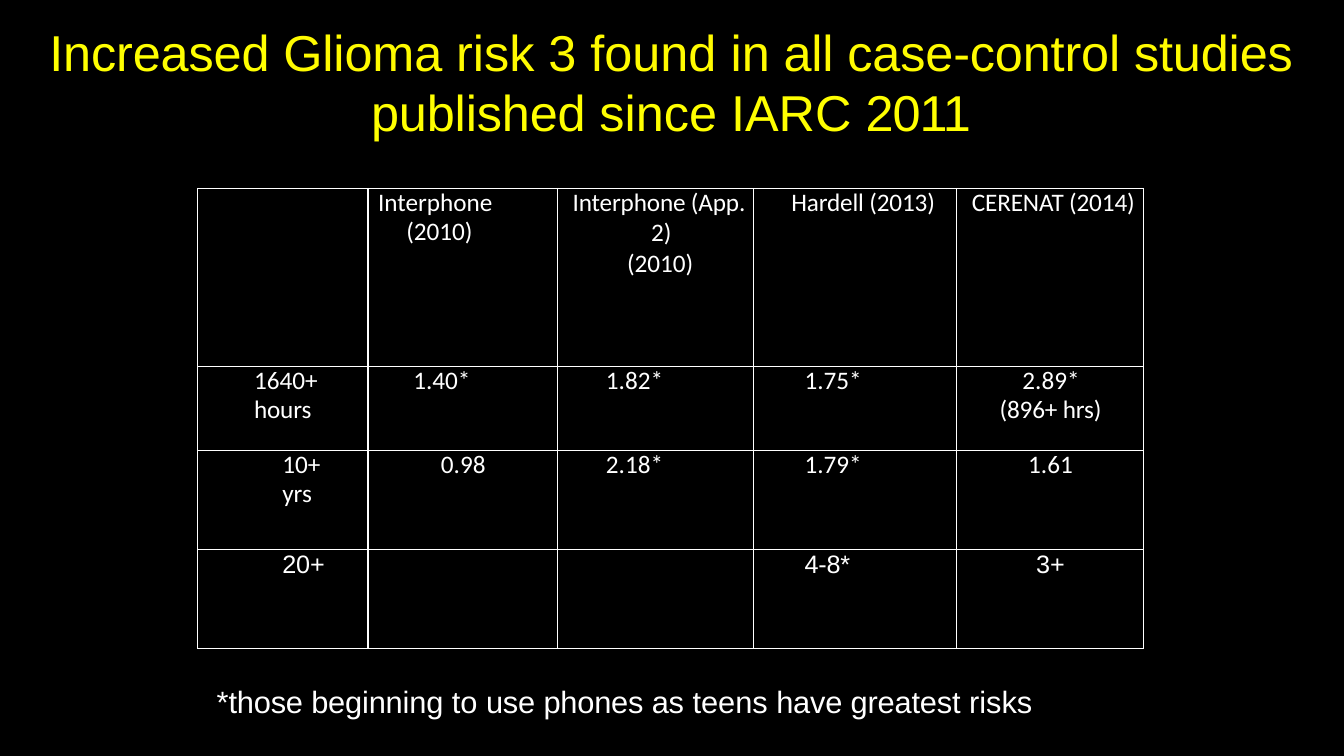
from dataclasses import dataclass

from lxml import etree
from pptx import Presentation
from pptx.dml.color import RGBColor
from pptx.enum.text import MSO_ANCHOR, MSO_AUTO_SIZE, PP_ALIGN
from pptx.oxml.ns import qn
from pptx.util import Pt

PX = 9144
TOP = MSO_ANCHOR.TOP
FIXED = MSO_AUTO_SIZE.NONE
GROW = MSO_AUTO_SIZE.SHAPE_TO_FIT_TEXT
LEFT, CENTER = PP_ALIGN.LEFT, PP_ALIGN.CENTER
BLACK = RGBColor(0, 0, 0)
WHITE = RGBColor(255, 255, 255)
YELLOW = RGBColor(255, 255, 0)
GOLD = RGBColor(255, 251, 0)
TITLE_ONLY = 5
TIGHT = -10
HEADER_ROWS = 3
COLUMN_WIDTHS = (169, 188, 194, 202, 185)
ROW_HEIGHTS = (33, 30, 114, 83, 98, 98)


@dataclass
class Line:
    """One paragraph of a table cell, with its indents in px."""
    text: str
    left: int = 0
    hang: int = 0
    align: PP_ALIGN = LEFT
    leading: float = 21
    font: str = "Calibri"
    spacing: int = 0


CELLS = {
    (0, 1): [Line("Interphone (2010)", 38, -28)],
    (0, 2): [Line("Interphone (App.", 15, spacing=TIGHT)],
    (0, 3): [Line("Hardell (2013)", 38, spacing=TIGHT)],
    (0, 4): [Line("CERENAT (2014)", 15, spacing=TIGHT)],
    (1, 2): [Line("2)", 12, align=CENTER, leading=19.1)],
    (2, 2): [Line("(2010)", 69, leading=19.6)],
    (3, 0): [Line("1640+", 56), Line("hours", 56, spacing=TIGHT)],
    (3, 1): [Line("1.40*", 45)],
    (3, 2): [Line("1.82*", 48)],
    (3, 3): [Line("1.75*", 51)],
    (3, 4): [Line("2.89*", 2, align=CENTER),
             Line("(896+ hrs)", 1, align=CENTER, spacing=TIGHT)],
    (4, 0): [Line("10+", 84), Line("yrs", 84)],
    (4, 1): [Line("0.98", 1, align=CENTER)],
    (4, 2): [Line("2.18*", 48)],
    (4, 3): [Line("1.79*", 51)],
    (4, 4): [Line("1.61", 1, align=CENTER)],
    (5, 0): [Line("20+", 84, font="Arial", spacing=TIGHT)],
    (5, 3): [Line("4-8*", 51, font="Arial", spacing=TIGHT)],
    (5, 4): [Line("3+", 1, align=CENTER, font="Arial", spacing=TIGHT)],
}


def scaled(box):
    """Turn a box in px into EMU."""
    return [length * PX for length in box]


def clear_margins(holder):
    """Remove the inner margins of a text frame or cell."""
    holder.margin_left = holder.margin_right = 0
    holder.margin_top = holder.margin_bottom = 0


def set_indent(para, left, hang=0):
    """Set the left margin and first-line indent of a paragraph."""
    properties = para._p.get_or_add_pPr()
    properties.set("marL", str(left * PX))
    properties.set("indent", str(hang * PX))


def add_span(para, text, font, size, color, spacing=0):
    """Add one formatted run to a paragraph."""
    span = para.add_run()
    span.text = text
    span.font.name = font
    span.font.size = Pt(size)
    span.font.color.rgb = color
    span.font._element.set("spc", str(spacing))


def add_title(page, box):
    """Fill the title placeholder with the two-line heading."""
    title = page.shapes.title
    title.left, title.top, title.width, title.height = scaled(box)
    frame = title.text_frame
    frame.word_wrap = True
    frame.auto_size = FIXED
    frame.vertical_anchor = TOP
    clear_margins(frame)
    para = frame.paragraphs[0]
    para.alignment = LEFT
    para.line_spacing = Pt(43)
    set_indent(para, 359, -319)
    for text, color, spacing in (
        ("Increased ", YELLOW, TIGHT),
        ("Glioma ", GOLD, TIGHT),
        ("risk 3 found ", GOLD, 0),
        ("in all case-control studies ", GOLD, TIGHT),
        ("published ", YELLOW, TIGHT),
        ("since IARC ", YELLOW, 0),
        ("2011", YELLOW, -70),
    ):
        add_span(para, text, "Arial", 36, color, spacing)


def style_cell(cell, row):
    """Give a cell its borders and black fill, the header rows read as one."""
    clear_margins(cell)
    cell.vertical_anchor = TOP
    hidden = set()
    if 0 < row < HEADER_ROWS:
        hidden.add("lnT")
    if row < HEADER_ROWS - 1:
        hidden.add("lnB")
    properties = cell._tc.get_or_add_tcPr()
    for edge in ("lnL", "lnR", "lnT", "lnB"):
        line = etree.SubElement(properties, qn(f"a:{edge}"), w=str(Pt(1)))
        if edge in hidden:
            etree.SubElement(line, qn("a:noFill"))
        else:
            paint = etree.SubElement(line, qn("a:solidFill"))
            etree.SubElement(paint, qn("a:srgbClr"), val=str(WHITE))
    cell.fill.solid()
    cell.fill.fore_color.rgb = BLACK


def fill_cell(cell, lines):
    """Write the lines of a cell, or keep an empty cell low."""
    frame = cell.text_frame
    if not lines:
        etree.SubElement(frame.paragraphs[0]._p, qn("a:endParaRPr"), sz="1000")
    for index, line in enumerate(lines):
        para = frame.add_paragraph() if index else frame.paragraphs[0]
        para.alignment = line.align
        para.line_spacing = Pt(line.leading)
        set_indent(para, line.left, line.hang)
        add_span(para, line.text, line.font, 18, WHITE, line.spacing)


def add_risk_table(page, box):
    """Add the table of glioma risks by study and length of use."""
    frame = page.shapes.add_table(
        len(ROW_HEIGHTS), len(COLUMN_WIDTHS), *scaled(box))
    table = frame.table
    table.first_row = table.horz_banding = False
    for column, width in zip(table.columns, COLUMN_WIDTHS):
        column.width = width * PX
    for row, height in zip(table.rows, ROW_HEIGHTS):
        row.height = height * PX
    for row in range(len(ROW_HEIGHTS)):
        for column in range(len(COLUMN_WIDTHS)):
            cell = table.cell(row, column)
            style_cell(cell, row)
            fill_cell(cell, CELLS.get((row, column), []))
    for column in (0, 1):
        table.cell(0, column).merge(table.cell(HEADER_ROWS - 1, column))


def add_footnote(page, box):
    """Add the note below the table."""
    frame = page.shapes.add_textbox(*scaled(box)).text_frame
    frame.word_wrap = True
    frame.auto_size = GROW
    clear_margins(frame)
    para = frame.paragraphs[0]
    set_indent(para, 1)
    for text, spacing in (
        ("*those beginning ", TIGHT), ("to ", 0), ("use phones as ", TIGHT),
        ("teens ", 0), ("have greatest ", TIGHT), ("risks", 0),
    ):
        add_span(para, text, "Arial", 22, WHITE, spacing)


def main():
    """Build the slide and save it."""
    deck = Presentation()
    deck.slide_width, deck.slide_height = scaled((1333, 750))
    page = deck.slides.add_slide(deck.slide_layouts[TITLE_ONLY])
    page.background.fill.solid()
    page.background.fill.fore_color.rgb = BLACK
    add_title(page, (9, 21, 1316, 251))
    add_risk_table(page, (196, 187, sum(COLUMN_WIDTHS), sum(ROW_HEIGHTS)))
    add_footnote(page, (214, 677, 820, 38))
    deck.save("out.pptx")


if __name__ == "__main__":
    main()
